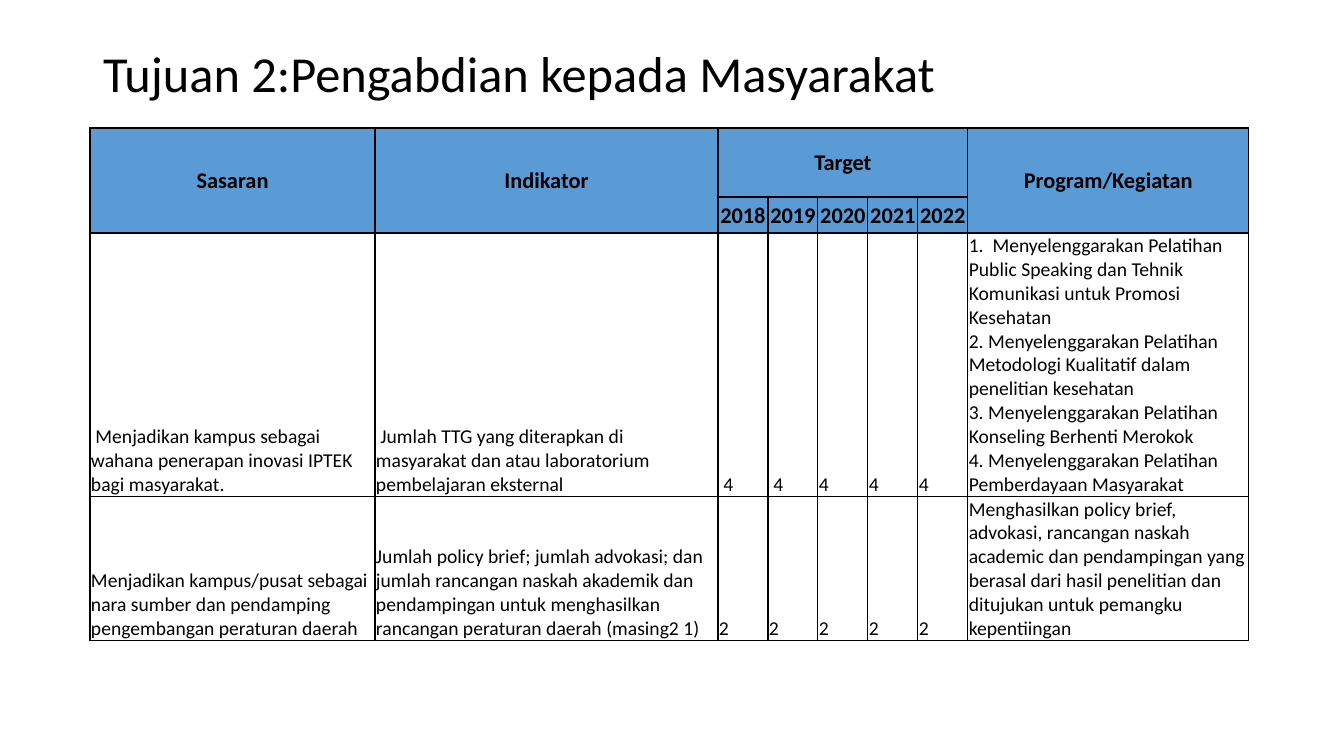
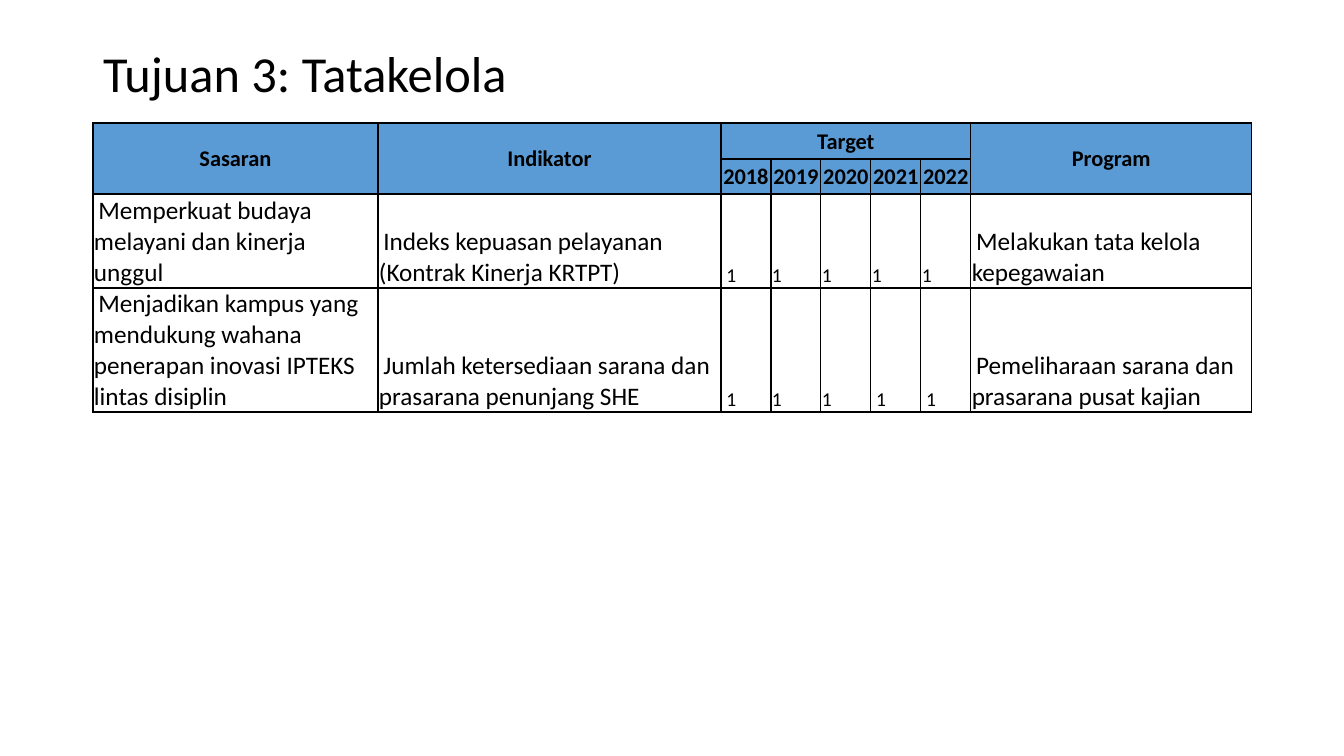
import dataclasses

import lxml.etree
import pptx
import pptx.dml.color
import pptx.enum.text
import pptx.oxml.ns
import pptx.util

ALIGN = pptx.enum.text.PP_ALIGN
ANCHOR = pptx.enum.text.MSO_ANCHOR
NBSP = " "


@dataclasses.dataclass(frozen=True)
class Theme:
    font: str = "Calibri"
    ink: str = "000000"
    header: str = "5B9BD5"
    title_size: int = 36
    header_size: int = 16
    small_size: int = 14
    large_size: int = 18
    border_width: int = 1


def px(length):
    """Turn px into EMU, at 100.8 px to the inch."""
    return pptx.util.Emu(round(length * 914400 / 100.8))


def apply(target, formats):
    for name, value in formats.items():
        setattr(target, name, value)


class Deck:
    COLUMNS = [285, 343, 50, 50, 50, 50, 50, 281]
    YEARS = ["2018", "2019", "2020", "2021", "2022"]
    FIRST_YEAR = 2
    LAST_YEAR = 6

    def __init__(self, theme):
        self.theme = theme
        self.file = pptx.Presentation()
        apply(self.file, {"slide_width": px(1344), "slide_height": px(756)})
        self.page = None

    def add_page(self, title):
        self.page = self.file.slides.add_slide(self.file.slide_layouts[5])
        box = self.page.shapes.title
        apply(box, {"left": px(93), "top": px(40), "width": px(1159), "height": px(72)})
        apply(box.text_frame, {
            "word_wrap": True,
            "auto_size": pptx.enum.text.MSO_AUTO_SIZE.NONE,
            "vertical_anchor": ANCHOR.MIDDLE,
        })
        para = box.text_frame.paragraphs[0]
        apply(para, {"alignment": ALIGN.LEFT, "line_spacing": 0.9})
        self.add_span(para, title, self.theme.title_size)

    def add_span(self, para, text, size, bold=False):
        span = para.add_run()
        span.text = text
        apply(span.font, {"name": self.theme.font, "size": pptx.util.Pt(size), "bold": bold})
        span.font.color.rgb = pptx.dml.color.RGBColor.from_string(self.theme.ink)

    def add_borders(self, cell):
        properties = cell._tc.get_or_add_tcPr()
        tag = pptx.oxml.ns.qn
        for side in ("a:lnL", "a:lnR", "a:lnT", "a:lnB"):
            line = lxml.etree.SubElement(properties, tag(side))
            line.set("w", str(pptx.util.Pt(self.theme.border_width)))
            fill = lxml.etree.SubElement(line, tag("a:solidFill"))
            lxml.etree.SubElement(fill, tag("a:srgbClr")).set("val", self.theme.ink)

    def style_cell(self, cell, is_header):
        apply(cell, {
            "margin_left": px(1), "margin_right": px(1),
            "margin_top": px(1), "margin_bottom": 0,
            "vertical_anchor": ANCHOR.MIDDLE if is_header else ANCHOR.BOTTOM,
        })
        self.add_borders(cell)
        if is_header:
            cell.fill.solid()
            cell.fill.fore_color.rgb = pptx.dml.color.RGBColor.from_string(self.theme.header)
        else:
            cell.fill.background()

    def write_header(self, cell, text):
        para = cell.text_frame.paragraphs[0]
        para.alignment = ALIGN.CENTER
        self.add_span(para, text, self.theme.header_size, bold=True)

    def write_body(self, cell, text, size):
        for index, line in enumerate(text.split("\n")):
            frame = cell.text_frame
            para = frame.add_paragraph() if index else frame.paragraphs[0]
            para.alignment = ALIGN.LEFT
            # A leading hard space keeps the small size
            if line.startswith(NBSP):
                self.add_span(para, NBSP, self.theme.small_size)
                line = line[len(NBSP):]
            self.add_span(para, line, size)

    def add_target_table(self, left, top, heights, program, records, body_size):
        frame = self.page.shapes.add_table(
            len(heights), len(self.COLUMNS), px(left), px(top),
            px(sum(self.COLUMNS)), px(sum(heights)))
        table = frame.table
        apply(table, {"first_row": False, "horz_banding": False})
        for column, width in zip(table.columns, self.COLUMNS):
            column.width = px(width)
        for row, height in zip(table.rows, heights):
            row.height = px(height)
        for row_index, row in enumerate(table.rows):
            for cell in row.cells:
                self.style_cell(cell, row_index < 2)

        # Two header rows, with the years under one heading
        last = len(self.COLUMNS) - 1
        for column, text in ((0, "Sasaran"), (1, "Indikator"), (last, program)):
            table.cell(0, column).merge(table.cell(1, column))
            self.write_header(table.cell(0, column), text)
        table.cell(0, self.FIRST_YEAR).merge(table.cell(0, self.LAST_YEAR))
        self.write_header(table.cell(0, self.FIRST_YEAR), "Target")
        for column, year in enumerate(self.YEARS, self.FIRST_YEAR):
            self.write_header(table.cell(1, column), year)

        # Body rows
        for row, (goal, indicator, targets, activity) in enumerate(records, 2):
            for column, text in enumerate([goal, indicator, *targets, activity]):
                is_year = self.FIRST_YEAR <= column <= self.LAST_YEAR
                size = self.theme.small_size if is_year else body_size
                self.write_body(table.cell(row, column), text, size)


def main():
    theme = Theme()
    deck = Deck(theme)

    # Community service
    deck.add_page("Tujuan 2:Pengabdian kepada Masyarakat")
    deck.add_target_table(90, 128, [69, 36, 263, 144], "Program/Kegiatan", [
        (" Menjadikan kampus sebagai wahana penerapan inovasi IPTEK bagi masyarakat.",
         " Jumlah TTG yang diterapkan di masyarakat dan atau laboratorium "
         "pembelajaran eksternal",
         [" 4", " 4", "4 ", "4 ", "4 "],
         "1.  Menyelenggarakan Pelatihan Public Speaking dan Tehnik Komunikasi "
         "untuk Promosi Kesehatan\n"
         "2. Menyelenggarakan Pelatihan Metodologi Kualitatif dalam penelitian kesehatan\n"
         "3. Menyelenggarakan Pelatihan Konseling Berhenti Merokok\n"
         "4. Menyelenggarakan Pelatihan Pemberdayaan Masyarakat"),
        ("Menjadikan kampus/pusat sebagai nara sumber dan pendamping "
         "pengembangan peraturan daerah",
         "Jumlah policy brief; jumlah advokasi; dan jumlah rancangan naskah akademik "
         "dan pendampingan untuk menghasilkan rancangan peraturan daerah (masing2 1)",
         ["2"] * 5,
         "Menghasilkan policy brief, advokasi, rancangan naskah academic dan "
         "pendampingan yang berasal dari hasil penelitian dan ditujukan untuk "
         "pemangku kepentiingan"),
    ], theme.small_size)

    # Governance
    deck.add_page("Tujuan 3: Tatakelola")
    deck.add_target_table(93, 123, [36, 35, 94, 124], "Program", [
        (" Memperkuat budaya melayani dan kinerja unggul",
         " Indeks kepuasan pelayanan (Kontrak Kinerja KRTPT)",
         [" 1", "1 ", "1 ", "1 ", "1 "],
         " Melakukan tata kelola kepegawaian"),
        (" Menjadikan kampus yang mendukung wahana penerapan inovasi IPTEKS lintas disiplin",
         " Jumlah ketersediaan sarana dan prasarana penunjang SHE",
         [" 1", "1 ", "1 ", " 1", " 1"],
         " Pemeliharaan sarana dan prasarana pusat kajian"),
    ], theme.large_size)

    deck.file.save("out.pptx")


if __name__ == "__main__":
    main()
